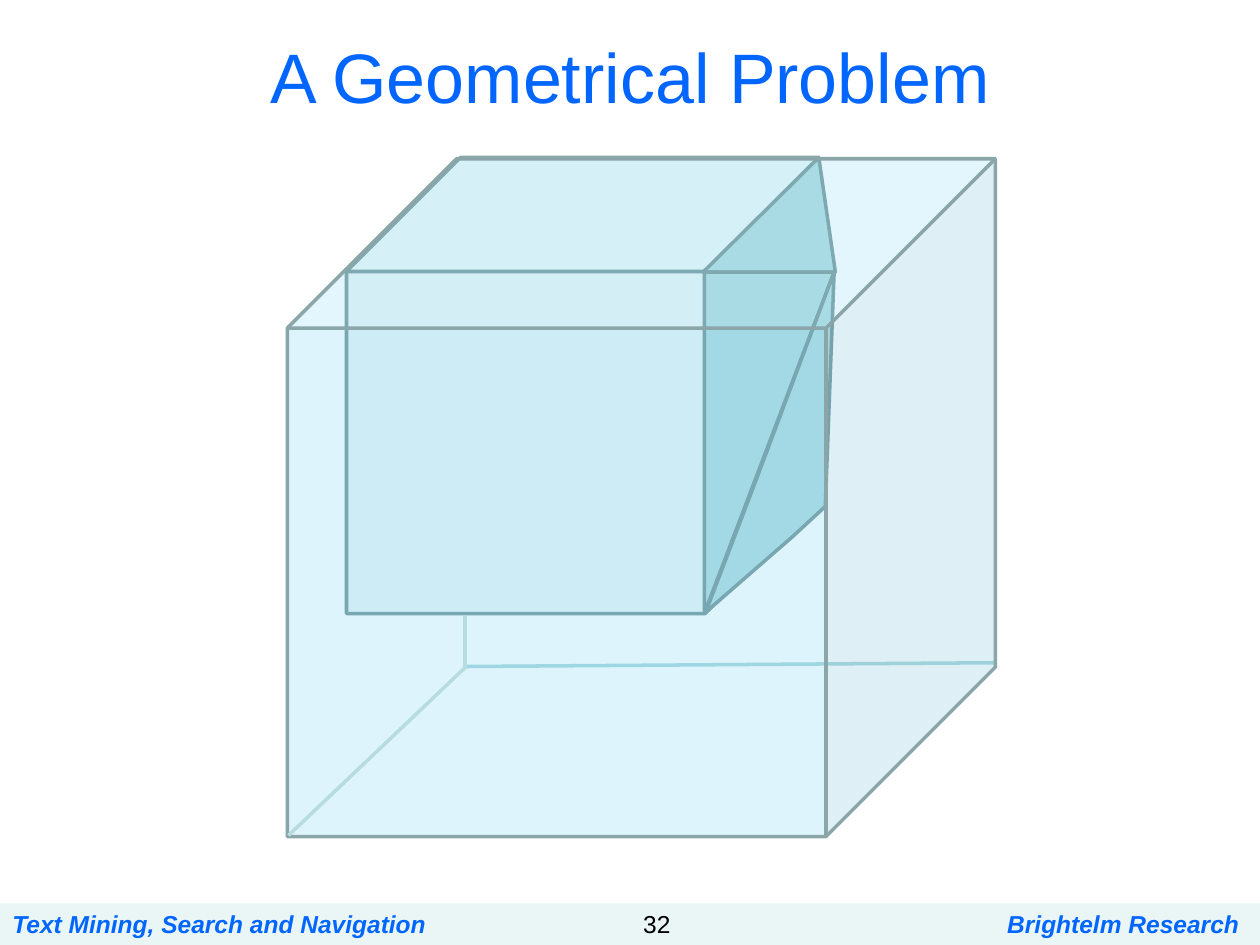
"""Build the slide of a cut block inside a glass cube."""
from lxml import etree
from pptx import Presentation
from pptx.dml.color import RGBColor
from pptx.enum import shapes as sh, text as tx
from pptx.oxml import ns
from pptx.util import Inches, Pt

BLUE = RGBColor(0x00, 0x66, 0xFF)
BLACK = RGBColor(0x00, 0x00, 0x00)
TEAL = RGBColor(0xBB, 0xE0, 0xE3)
SKY = RGBColor(0x00, 0xB0, 0xF0)
EDGE = RGBColor(0x8A, 0xA6, 0xA8)
PALE = RGBColor(0xB6, 0xDC, 0xDF)

KIND = sh.MSO_SHAPE
LEFT, MID, RIGHT = tx.PP_ALIGN.LEFT, tx.PP_ALIGN.CENTER, tx.PP_ALIGN.RIGHT

BAND = (0, 7.17, 10, 0.33)
BLOCK = (2.75, 1.25, 3.75, 3.62)
CUBE = (2.28, 1.26, 5.62, 5.38)
WEDGE = (5.58, 1.25, 1.05, 0.91)
FACES = [
    [(5.59, 2.16), (6.62, 2.16), (5.59, 4.87)],
    [(5.6, 4.86), (5.99, 3.84), (6.62, 2.16), (6.55, 4.02), (6.29, 4.26)],
]
BACK = ((7.89, 5.26), (3.7, 5.29))
INNER = [((3.7, 5.29), (2.29, 6.63)), ((3.69, 5.31), (3.69, 4.89))]
TITLE = ("A Geometrical Problem", (0.5, 0.25, 9, 0.7), MID, 40, BLUE, False)
FOOT = [
    ("Text Mining, Search and Navigation", (0, 7.17, 3.5, 0.33), LEFT, 14, BLUE, True),
    ("32", (4.75, 7.17, 0.67, 0.33), RIGHT, 14, BLACK, False),
    ("Brightelm Research", (7.83, 7.17, 2.17, 0.33), MID, 14, BLUE, True),
]


def paint(shape, color, alpha=100, edge=EDGE):
    shape.shadow.inherit = False
    shape.fill.solid()
    shape.fill.fore_color.rgb = color
    if alpha < 100:
        tint = shape.fill._xPr.find(".//" + ns.qn("a:srgbClr"))
        etree.SubElement(tint, ns.qn("a:alpha"), val=str(alpha * 1000))
    if edge is None:
        shape.line.fill.background()
    else:
        shape.line.color.rgb = edge
        shape.line.width = Pt(2)


def add_solid(slide, kind, box, color, alpha=100, edge=EDGE, adj=None):
    shape = slide.shapes.add_shape(kind, *map(Inches, box))
    if adj is not None:
        shape.adjustments[0] = adj
    paint(shape, color, alpha, edge)


def add_face(slide, points):
    start, *rest = [tuple(map(Inches, point)) for point in points]
    pen = slide.shapes.build_freeform(*start)
    pen.add_line_segments(rest, close=True)
    paint(pen.convert_to_shape(), TEAL)


def add_edge(slide, start, end):
    line = slide.shapes.add_connector(
        sh.MSO_CONNECTOR.STRAIGHT, *map(Inches, start + end))
    line.line.color.rgb = PALE
    line.line.width = Pt(2)
    etree.SubElement(line._element.spPr, ns.qn("a:effectLst"))


def add_label(slide, words, box, align, size, color, strong):
    frame = slide.shapes.add_textbox(*map(Inches, box)).text_frame
    frame.word_wrap = True
    frame.vertical_anchor = tx.MSO_ANCHOR.MIDDLE
    para = frame.paragraphs[0]
    para.text = words
    para.alignment = align
    font = para.font
    font.name, font.size, font.color.rgb = "Arial", Pt(size), color
    font.bold = font.italic = strong


def main():
    deck = Presentation()
    deck.slide_width, deck.slide_height = Inches(10), Inches(7.5)
    slide = deck.slides.add_slide(deck.slide_layouts[6])
    add_solid(slide, KIND.RECTANGLE, BAND, TEAL, 30, None)
    add_edge(slide, *BACK)
    add_solid(slide, KIND.CUBE, BLOCK, TEAL, 28, adj=0.25)
    add_solid(slide, KIND.ISOSCELES_TRIANGLE, WEDGE, TEAL, adj=0.875)
    for face in FACES:
        add_face(slide, face)
    add_solid(slide, KIND.CUBE, CUBE, SKY, 13, adj=0.25)
    for edge in INNER:
        add_edge(slide, *edge)
    for label in [TITLE] + FOOT:
        add_label(slide, *label)
    deck.save("out.pptx")


if __name__ == "__main__":
    main()
